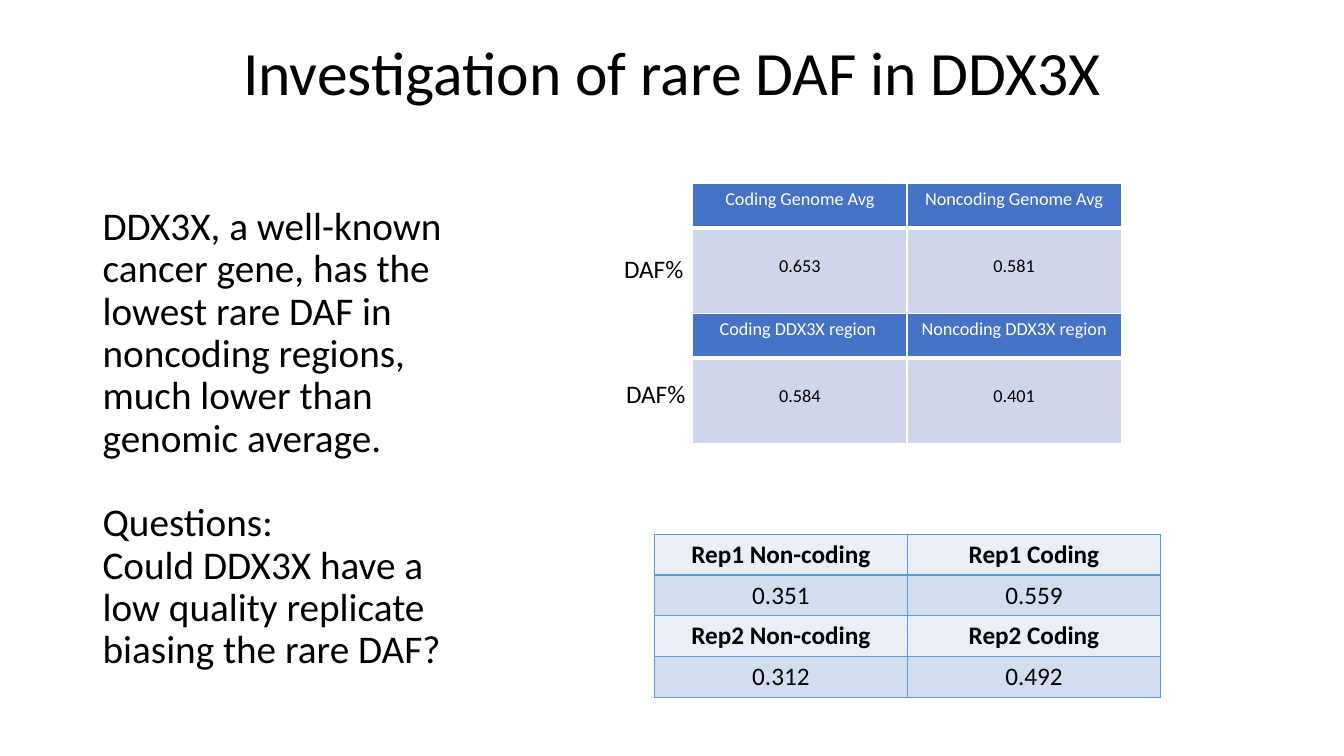
from dataclasses import dataclass

from lxml import etree
from pptx import Presentation
from pptx import util as u
from pptx.dml import color
from pptx.enum import text
from pptx.oxml import ns


@dataclass(frozen=True)
class Theme:
    font: str = "Calibri"
    ink: str = "000000"
    paper: str = "FFFFFF"
    header: str = "4472C4"
    value: str = "CFD5EA"
    rep_header: str = "EAEFF7"
    rep_value: str = "D2DEEF"
    rep_line: str = "5B9BD5"
    title: int = 44
    body: int = 28
    label: int = 18
    small: int = 13


@dataclass(frozen=True)
class RowStyle:
    fill: str
    ink: str
    size: int
    line: str
    bold: bool = False
    top: int = 1
    bottom: int = 1
    inset: float = 0.05


def write(p, words, *, theme, size, ink=None, bold=False, align=text.PP_ALIGN.LEFT,
          spacing=None, before=None):
    p.alignment = align
    if spacing is not None:
        p.line_spacing = spacing
    if before is not None:
        p.space_before = u.Pt(before)
    r = p.add_run()
    r.text = words
    r.font.name = theme.font
    r.font.size = u.Pt(size)
    r.font.bold = bold
    r.font.color.rgb = color.RGBColor.from_string(ink or theme.ink)


class Deck:
    def __init__(self, theme):
        self.theme = theme
        self.prs = Presentation()
        self.prs.slide_width = u.Inches(13.33)
        self.prs.slide_height = u.Inches(7.5)
        self.s = self.prs.slides.add_slide(self.prs.slide_layouts[6])

    def across(self, percent):
        return u.Emu(round(self.prs.slide_width * percent / 100))

    def down(self, percent):
        return u.Emu(round(self.prs.slide_height * percent / 100))

    def text(self, x, y, w, h, paragraphs, *, wrap=True,
             anchor=text.MSO_ANCHOR.TOP, gaps=None, **fmt):
        sp = self.s.shapes.add_textbox(self.across(x), self.down(y),
                                       self.across(w), self.down(h))
        tf = sp.text_frame
        tf.word_wrap = wrap
        tf.vertical_anchor = anchor
        if not wrap:
            tf.auto_size = text.MSO_AUTO_SIZE.SHAPE_TO_FIT_TEXT
        for i, words in enumerate(paragraphs):
            p = tf.paragraphs[0] if i == 0 else tf.add_paragraph()
            write(p, words, theme=self.theme, before=(gaps or {}).get(i), **fmt)

    def border(self, cell, style):
        tcPr = cell._tc.get_or_add_tcPr()
        widths = {"lnL": 1, "lnR": 1, "lnT": style.top, "lnB": style.bottom}
        for side, width in widths.items():
            ln = etree.SubElement(tcPr, ns.qn(f"a:{side}"), w=str(u.Pt(width)))
            fill = etree.SubElement(ln, ns.qn("a:solidFill"))
            etree.SubElement(fill, ns.qn("a:srgbClr"), val=style.line)

    def table(self, x, y, w, heights, rows, styles):
        tbl = self.s.shapes.add_table(
            len(rows), len(rows[0]), self.across(x), self.down(y),
            self.across(w), self.down(sum(heights))).table
        tbl.first_row = tbl.horz_banding = False
        for row, height, values, style in zip(tbl.rows, heights, rows, styles):
            row.height = self.down(height)
            for cell, words in zip(row.cells, values):
                self.border(cell, style)
                cell.fill.solid()
                cell.fill.fore_color.rgb = color.RGBColor.from_string(style.fill)
                cell.margin_top = u.Inches(style.inset)
                write(cell.text_frame.paragraphs[0], words, theme=self.theme,
                      size=style.size, ink=style.ink, bold=style.bold,
                      align=text.PP_ALIGN.CENTER)


def main():
    t = Theme()
    deck = Deck(t)

    deck.text(6.9, 0.27, 86.27, 19.33, ["Investigation of rare DAF in DDX3X"],
              size=t.title, align=text.PP_ALIGN.CENTER, spacing=0.9,
              anchor=text.MSO_ANCHOR.MIDDLE)
    deck.text(6.9, 26.67, 29.78, 63.47, [
        "DDX3X, a well-known cancer gene, has the lowest rare DAF in "
        "noncoding regions, much lower than genomic average.",
        "Questions:",
        "Could DDX3X have a low quality replicate biasing the rare DAF?",
    ], size=t.body, spacing=0.9, gaps={1: 30.2})

    daf_styles = [
        RowStyle(t.header, t.paper, t.small, t.paper, bottom=3),
        RowStyle(t.value, t.ink, t.small, t.paper, top=3, inset=0.27),
    ]
    daf_heights = [5.87, 11.33]
    daf_tables = [
        [["Coding Genome Avg", "Noncoding Genome Avg"], ["0.653", "0.581"]],
        [["Coding DDX3X region ", "Noncoding DDX3X region"], ["0.584", "0.401"]],
    ]
    for i, rows in enumerate(daf_tables):
        deck.table(51.54, 24.27 + i * sum(daf_heights), 31.88,
                   daf_heights, rows, daf_styles)

    rep_styles = [
        RowStyle(t.rep_header, t.ink, t.label, t.rep_line, bold=True),
        RowStyle(t.rep_value, t.ink, t.label, t.rep_line),
    ]
    deck.table(48.69, 70.67, 37.66, [5.4] * 4, [
        ["Rep1 Non-coding", "Rep1 Coding"],
        ["0.351", "0.559"],
        ["Rep2 Non-coding", "Rep2 Coding"],
        ["0.312", "0.492"],
    ], rep_styles * 2)

    for x, y in [(45.69, 32.8), (45.84, 49.33)]:
        deck.text(x, y, 6, 5.33, ["DAF%"], size=t.label, wrap=False)

    deck.prs.save("out.pptx")


if __name__ == "__main__":
    main()
